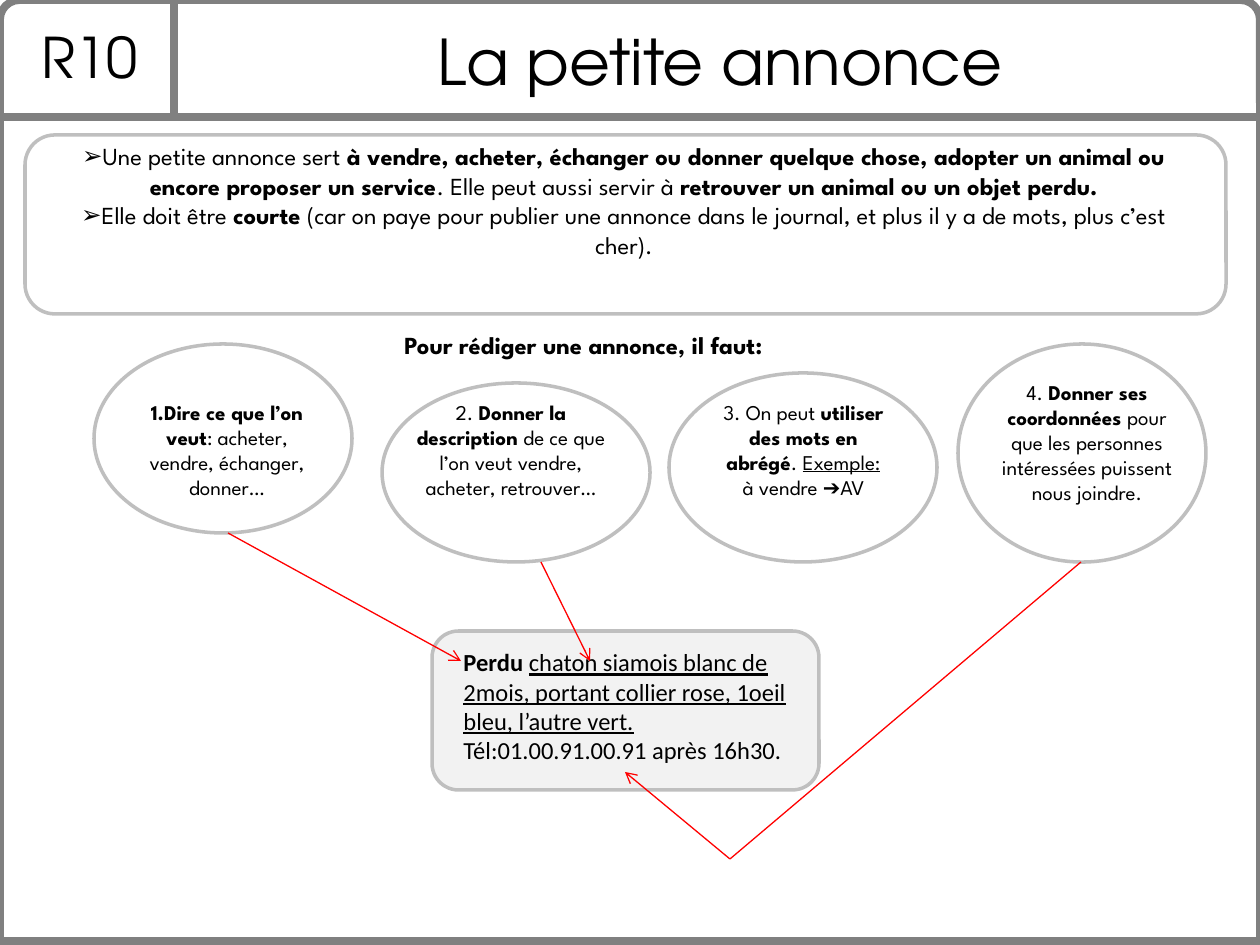
from lxml.etree import SubElement
from pptx import Presentation
from pptx.dml.color import RGBColor
from pptx.enum.shapes import MSO_CONNECTOR, MSO_SHAPE as Shape
from pptx.enum.text import MSO_ANCHOR, MSO_AUTO_SIZE, PP_ALIGN as Align
from pptx.oxml.ns import qn
from pptx.util import Emu, Pt

PX = 914400 / 126
GEOMETRIC, SPARTAN, CALIBRI = "TeX Gyre Adventor", "League Spartan", "Calibri"
BLACK, FRAME, BORDER, AD_FILL, RED = "000000", "808080", "BFBFBF", "F2F2F2", "FF0000"


def px(*lengths):
    return [Emu(round(length * PX)) for length in lengths]


def color(hex_value):
    return RGBColor.from_string(hex_value)


class Sheet:
    """The current slide and its drawing style."""

    def __init__(self, slide):
        self.slide = slide
        self.shapes = slide.shapes

    def outline(self, kind, box, line=BORDER, width=2, fill=None):
        shape = self.shapes.add_shape(kind, *px(*box))
        shape.shadow.inherit = False
        if fill:
            shape.fill.solid()
            shape.fill.fore_color.rgb = color(fill)
        else:
            shape.fill.background()
        shape.line.color.rgb = color(line)
        shape.line.width = Pt(width)

    def line(self, start, end, stroke=RED, width=0.75, arrow=False):
        connector = self.shapes.add_connector(MSO_CONNECTOR.STRAIGHT, *px(*start, *end))
        connector.line.color.rgb = color(stroke)
        connector.line.width = Pt(width)
        if arrow:
            SubElement(connector.line._get_or_add_ln(), qn("a:tailEnd"), type="arrow")
        SubElement(connector._element.spPr, qn("a:effectLst"))

    def text(self, box, paragraphs, size, font=SPARTAN, align=Align.CENTER,
             holder=None, bullet=None):
        """Write paragraphs of (text, style) runs; style holds b for bold, u for underline."""
        holder = holder or self.shapes.add_textbox(*px(*box))
        holder.left, holder.top, holder.width, holder.height = px(*box)
        frame = holder.text_frame
        frame.word_wrap = True
        frame.auto_size = MSO_AUTO_SIZE.SHAPE_TO_FIT_TEXT
        frame.vertical_anchor = MSO_ANCHOR.TOP
        for index, runs in enumerate(paragraphs):
            paragraph = frame.add_paragraph() if index else frame.paragraphs[0]
            paragraph.alignment = align
            paragraph.space_before = Pt(0)
            if bullet:
                properties = paragraph._p.get_or_add_pPr()
                properties.set("marL", "0")
                properties.set("indent", "0")
                SubElement(properties, qn("a:buChar"), char=bullet)
            for words, style in runs:
                run = paragraph.add_run()
                run.text = words
                run.font.name = font
                run.font.size = Pt(size)
                run.font.color.rgb = color(BLACK)
                run.font.bold = "b" in style
                run.font.underline = "u" in style


PURPOSE = [
    [("Une petite annonce sert ", ""),
     ("à vendre, acheter, échanger ou donner quelque chose, adopter un animal "
      "ou encore proposer un service", "b"),
     (". Elle peut aussi servir à ", ""),
     ("retrouver un animal ou un objet perdu.", "b")],
    [("Elle doit être ", ""), ("courte", "b"),
     (" (car on paye pour publier une annonce dans le journal, et plus il y a de mots, "
      "plus c’est cher).", "")],
]

# Each step: ellipse box, text box, paragraphs
STEPS = [
    ((94, 344, 258, 189), (123, 393, 208, 140),
     [[("1.Dire ce que l’on veut", "b"), (": acheter, vendre, échanger, donner…", "")]]),
    ((382, 383, 268, 179), (402, 393, 218, 140),
     [[("2. ", ""), ("Donner la description ", "b"),
       ("de ce que l’on veut vendre, acheter, retrouver…", "")]]),
    ((669, 373, 268, 189), (709, 393, 189, 140),
     [[("3. On peut ", ""), ("utiliser des mots en abrégé", "b"), (". ", ""),
       ("Exemple:", "u")],
      [("à vendre ➔AV", "")]]),
    ((958, 344, 248, 218), (978, 373, 218, 165),
     [[("4. ", ""), ("Donner ses coordonnées ", "b"),
       ("pour que les personnes intéressées puissent nous joindre.", "")]]),
]

SAMPLE_AD = [
    [("Perdu ", "b"),
     ("chaton siamois blanc de 2mois, portant collier rose, 1oeil bleu, l’autre vert.", "u")],
    [("Tél:01.00.91.00.91 après 16h30.", "")],
]


def main():
    deck = Presentation()
    deck.slide_width, deck.slide_height = px(1260, 945)
    slide = deck.slides.add_slide(deck.slide_layouts[1])
    title, purpose = slide.placeholders
    sheet = Sheet(slide)

    sheet.outline(Shape.ROUND_2_SAME_RECTANGLE, (0, 0, 1260, 117), FRAME, 4.5)
    sheet.outline(Shape.RECTANGLE, (0, 117, 1260, 824), FRAME, 4.5)
    sheet.line((174, 0), (174, 117), FRAME, 4.5)
    sheet.text((15, 16, 149, 81), [[("R10", "")]], 32, GEOMETRIC)
    sheet.text((194, 16, 1052, 89), [[("La petite annonce", "")]], 36, GEOMETRIC, holder=title)

    sheet.outline(Shape.ROUNDED_RECTANGLE, (25, 135, 1201, 179))
    sheet.text((44, 135, 1160, 161), PURPOSE, 14, holder=purpose, bullet="➢")

    sheet.text((392, 324, 515, 43), [[("Pour rédiger une annonce, il faut:", "b")]], 14,
               align=Align.LEFT)
    for ellipse, text_box, advice in STEPS:
        sheet.outline(Shape.OVAL, ellipse)
        sheet.text(text_box, advice, 12)

    sheet.outline(Shape.ROUNDED_RECTANGLE, (432, 631, 387, 159), fill=AD_FILL)
    sheet.text((451, 641, 348, 131), SAMPLE_AD, 14, CALIBRI, Align.LEFT)

    bend = (730, 859)
    sheet.line((228, 533), (461, 661), arrow=True)
    sheet.line((541, 562), (590, 661), arrow=True)
    sheet.line((1081, 562), bend)
    sheet.line(bend, (625, 772), arrow=True)

    deck.save("out.pptx")


if __name__ == "__main__":
    main()
